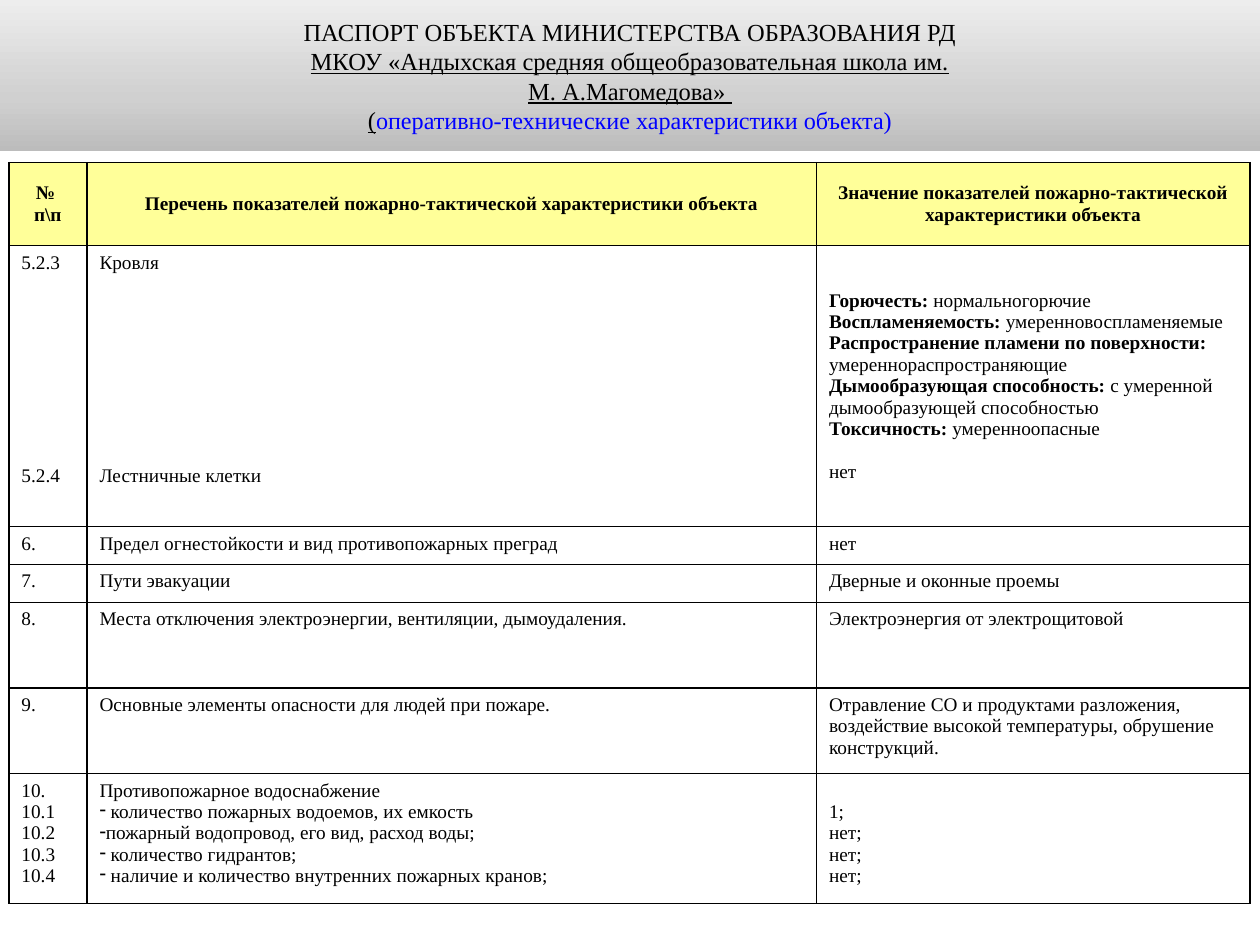
import copy

import lxml.etree
import pptx
import pptx.dml.color
import pptx.enum.shapes
import pptx.enum.text
import pptx.oxml
import pptx.oxml.ns
import pptx.util

MIDDLE = pptx.enum.text.MSO_ANCHOR.MIDDLE
TOP = pptx.enum.text.MSO_ANCHOR.TOP
CENTER = pptx.enum.text.PP_ALIGN.CENTER
LEFT = pptx.enum.text.PP_ALIGN.LEFT
LINE = 12.2  # height of one table text line, points

HEADER = [
    ["№ ", "п\\п"],
    ["Перечень показателей пожарно-тактической характеристики объекта"],
    ["Значение показателей пожарно-тактической характеристики объекта"],
]
# A tuple is a bold label and its plain value; a leading "-" becomes a bullet
ROWS = [
    [["5.2.3", "5.2.4"], ["Кровля", "Лестничные клетки"], [
        ("Горючесть: ", "нормальногорючие"),
        ("Воспламеняемость: ", "умеренновоспламеняемые"),
        ("Распространение пламени по поверхности:", ""),
        "умереннораспространяющие",
        ("Дымообразующая способность: ", "с умеренной дымообразующей способностью"),
        ("Токсичность: ", "умеренноопасные"),
        "нет",
    ]],
    [["6."], ["Предел огнестойкости и вид противопожарных преград"], ["нет"]],
    [["7."], ["Пути эвакуации"], ["Дверные и оконные проемы"]],
    [["8."], ["Места отключения электроэнергии, вентиляции, дымоудаления."],
     ["Электроэнергия от электрощитовой"]],
    [["9."], ["Основные элементы опасности для людей при пожаре."],
     ["Отравление СО и продуктами разложения, воздействие высокой температуры, "
      "обрушение конструкций."]],
    [["10.", "10.1", "10.2", "10.3", "10.4"], [
        "Противопожарное водоснабжение",
        "- количество пожарных водоемов, их емкость",
        "-пожарный водопровод, его вид, расход воды;",
        "- количество гидрантов;",
        "- наличие и количество внутренних пожарных кранов;",
    ], ["1;", "нет;", "нет;", "нет;"]],
]
# Lines left free above the last paragraph of the roof and stairs cells
LAST_GAPS = {(1, 0): 9, (1, 1): 9, (1, 2): 1}


def color(value):
    return pptx.dml.color.RGBColor.from_string(value)


def write(paragraph, text, size=11, ink="000000", bold=False, underline=False):
    """Add text to a paragraph; a newline becomes a line break."""
    for index, line in enumerate(text.split("\n")):
        if index:
            paragraph.add_line_break()
            paragraph._p[-1].append(copy.deepcopy(run._r.rPr))
        run = paragraph.add_run()
        run.text = line
        font = run.font
        font.name, font.size = "Times New Roman", pptx.util.Pt(size)
        font.bold, font.underline = bold, underline
        font.color.rgb = color(ink)


class Page:
    columns, rows = 100, 75

    def __init__(self, presentation):
        self.unit_x = presentation.slide_width / self.columns
        self.unit_y = presentation.slide_height / self.rows
        self.slide = presentation.slides.add_slide(presentation.slide_layouts[6])

    def x(self, columns):
        return pptx.util.Emu(round(columns * self.unit_x))

    def y(self, rows):
        return pptx.util.Emu(round(rows * self.unit_y))

    def banner(self, left, top, width, height, stops, paragraphs):
        shape = self.slide.shapes.add_shape(
            pptx.enum.shapes.MSO_SHAPE.RECTANGLE,
            self.x(left), self.y(top), self.x(width), self.y(height))
        shape.shadow.inherit = False
        shape.line.fill.background()
        # Gradient from the bottom up
        shape.fill.gradient()
        shape.fill.gradient_angle = 90
        stop_list = shape._element.spPr.find(".//" + pptx.oxml.ns.qn("a:gsLst"))
        stop_list.insert(1, copy.deepcopy(stop_list[0]))
        for element, stop, (position, value) in zip(
                stop_list, shape.fill.gradient_stops, stops):
            element.set("pos", str(position * 1000))
            stop.color.rgb = color(value)
        # Title text
        frame = shape.text_frame
        frame.word_wrap, frame.vertical_anchor = True, MIDDLE
        frame.margin_left = frame.margin_right = self.x(0.8)
        frame.margin_top = frame.margin_bottom = self.y(0.4)
        for index, runs in enumerate(paragraphs):
            paragraph = frame.add_paragraph() if index else frame.paragraphs[0]
            paragraph.alignment = CENTER
            for text, style in runs:
                write(paragraph, text, **style)

    def table(self, left, top, widths, heights):
        table = self.slide.shapes.add_table(
            len(heights), len(widths), self.x(left), self.y(top),
            self.x(sum(widths)), self.y(sum(heights))).table
        table.horz_banding = table.first_row = False
        for column, width in zip(table.columns, widths):
            column.width = self.x(width)
        for row, height in zip(table.rows, heights):
            row.height = self.y(height)
        return table

    def cell(self, cell, paragraphs, fill="FFFFFF", bold=False,
             align=LEFT, anchor=TOP, last_gap=0, top_gap=0):
        # Borders come before the fill in the cell properties
        properties = cell._tc.get_or_add_tcPr()
        for side in ("lnL", "lnR", "lnT", "lnB"):
            border = lxml.etree.SubElement(
                properties, pptx.oxml.ns.qn("a:" + side), w=str(pptx.util.Pt(1)))
            solid = lxml.etree.SubElement(border, pptx.oxml.ns.qn("a:solidFill"))
            lxml.etree.SubElement(solid, pptx.oxml.ns.qn("a:srgbClr"), val="000000")
        cell.fill.solid()
        cell.fill.fore_color.rgb = color(fill)
        cell.vertical_anchor = anchor
        cell.margin_left = cell.margin_right = self.x(1)
        cell.margin_bottom = self.y(0.5)
        cell.margin_top = self.y(0.5) + pptx.util.Pt(LINE * top_gap)
        frame = cell.text_frame
        for index, content in enumerate(paragraphs):
            paragraph = frame.add_paragraph() if index else frame.paragraphs[0]
            paragraph.alignment = align
            label, text = content if isinstance(content, tuple) else ("", content)
            if label:
                write(paragraph, label, bold=True)
            if text.startswith("-"):
                self.bullet(paragraph)
                text = text[1:]
            if text:
                write(paragraph, text, bold=bold)
        if last_gap:
            paragraph.space_before = pptx.util.Pt(LINE * last_gap)

    def bullet(self, paragraph):
        properties = paragraph._p.get_or_add_pPr()
        properties.set("marL", "0")
        properties.set("indent", "0")
        lxml.etree.SubElement(properties, pptx.oxml.ns.qn("a:buChar"), char="-")


def main():
    presentation = pptx.Presentation()
    presentation.slide_width = pptx.util.Inches(10)
    presentation.slide_height = pptx.util.Inches(7.5)
    page = Page(presentation)

    # Table of fire safety indicators
    table = page.table(0.7, 12.9, [6.2, 57.9, 34.4],
                       [6.6, 22.3, 3, 3, 6.8, 6.8, 10.3])
    for column, paragraphs in enumerate(HEADER):
        page.cell(table.cell(0, column), paragraphs, fill="FFFF99", bold=True,
                  align=CENTER, anchor=MIDDLE)
    for row, cells in enumerate(ROWS, start=1):
        for column, paragraphs in enumerate(cells):
            page.cell(table.cell(row, column), paragraphs,
                      anchor=MIDDLE if (row, column) == (1, 2) else TOP,
                      last_gap=LAST_GAPS.get((row, column), 0),
                      top_gap=1 if (row, column) == (6, 2) else 0)

    # Title banner
    page.banner(
        0, 0, 100, 12, [(0, "BCBCBC"), (35, "D0D0D0"), (100, "EDEDED")],
        [[("ПАСПОРТ ОБЪЕКТА МИНИСТЕРСТВА ОБРАЗОВАНИЯ РД\n", {"size": 14}),
          ("МКОУ «Андыхская средняя общеобразовательная школа им.\n"
           "М. А.Магомедова» ", {"size": 14, "underline": True})],
         [("(", {"size": 14, "underline": True}),
          ("оперативно-технические характеристики объекта)",
           {"size": 13.8, "ink": "0000FF"})]])

    presentation.save("out.pptx")


if __name__ == "__main__":
    main()
